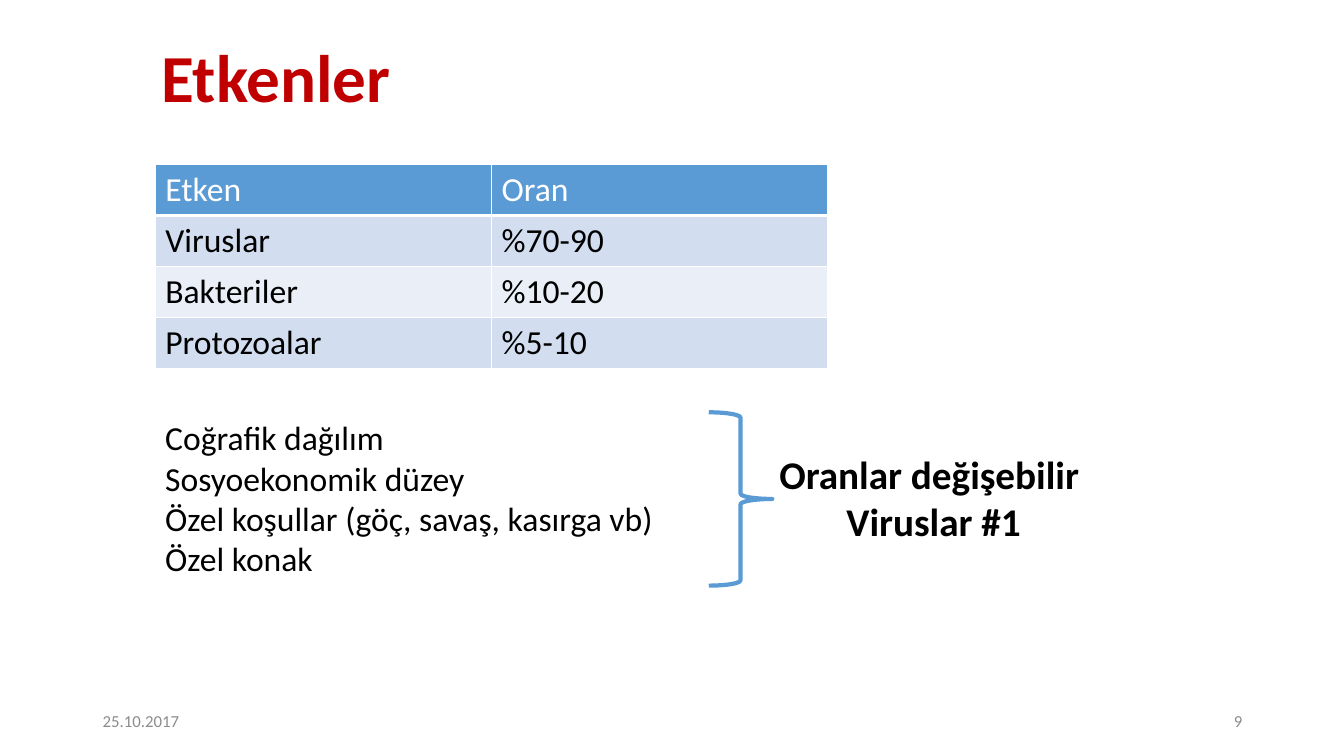
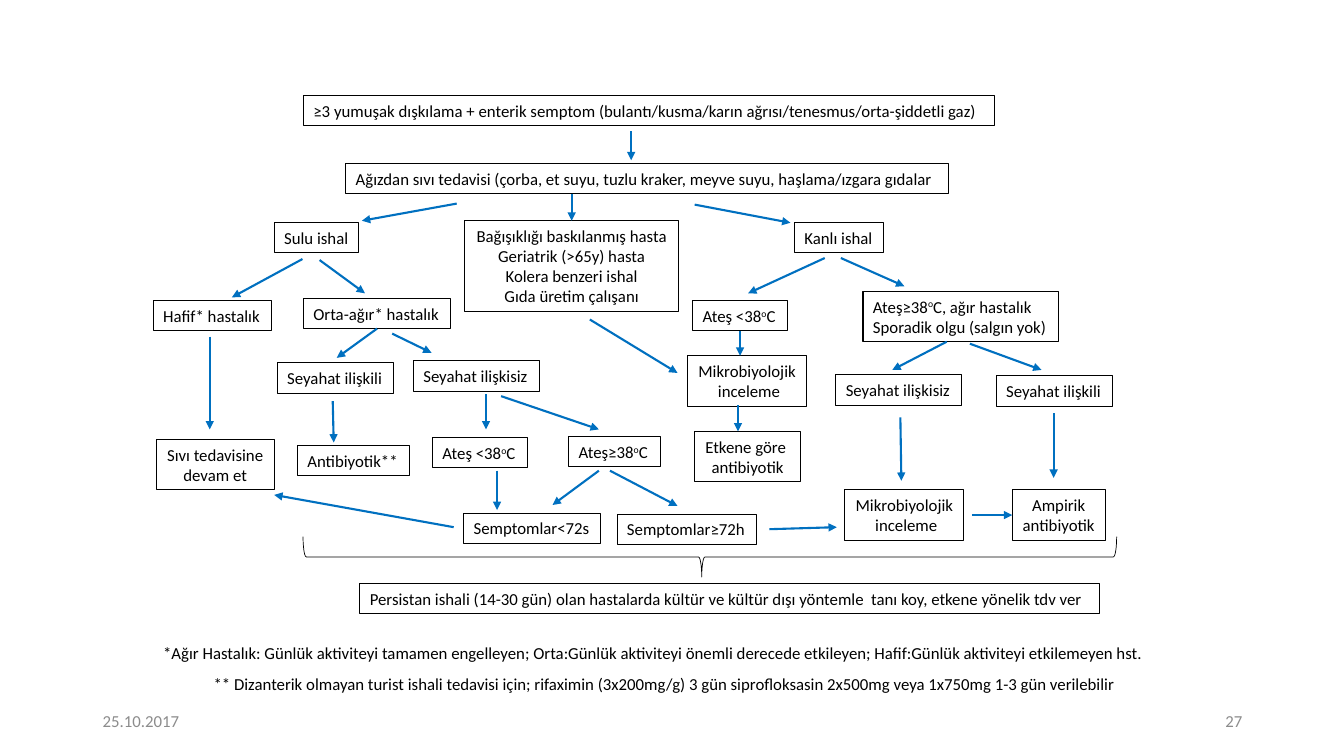
from lxml import etree
from pptx import Presentation
from pptx.dml.color import RGBColor
from pptx.enum.shapes import MSO_CONNECTOR, MSO_SHAPE
from pptx.enum.text import MSO_ANCHOR, MSO_AUTO_SIZE, PP_ALIGN
from pptx.oxml.ns import qn
from pptx.util import Emu, Pt

PX = 9144
FONT = "Calibri"
COLORS = {
    "title": "C00000", "text": "000000", "white": "FFFFFF", "footer": "8C8C8C",
    "accent": "5B9BD5", "band_dark": "D2DEEF", "band_light": "EAEFF7",
    "arrow": "0070C0",
}
LEFT, CENTER, RIGHT = PP_ALIGN.LEFT, PP_ALIGN.CENTER, PP_ALIGN.RIGHT
TOP, MIDDLE, BOTTOM = MSO_ANCHOR.TOP, MSO_ANCHOR.MIDDLE, MSO_ANCHOR.BOTTOM
FIT_SHAPE = MSO_AUTO_SIZE.SHAPE_TO_FIT_TEXT
RIGHT_BRACE = MSO_SHAPE.RIGHT_BRACE
STRAIGHT = MSO_CONNECTOR.STRAIGHT
SITE_TOP, SITE_LEFT, SITE_BOTTOM = 0, 1, 2

DATE = "25.10.2017"
RATES = [
    ("Etken", "Oran"),
    ("Viruslar", "%70-90"),
    ("Bakteriler", "%10-20"),
    ("Protozoalar", "%5-10"),
]
FACTORS = [
    "Coğrafik dağılım",
    "Sosyoekonomik düzey",
    "Özel koşullar (göç, savaş, kasırga vb)",
    "Özel konak",
]
NOTES = [
    "*Ağır Hastalık: Günlük aktiviteyi tamamen engelleyen; Orta:Günlük aktiviteyi "
    "önemli derecede etkileyen; Hafif:Günlük aktiviteyi etkilemeyen hst.",
    "** Dizanterik olmayan turist ishali tedavisi için; rifaximin (3x200mg/g) 3 gün "
    "siprofloksasin 2x500mg veya 1x750mg 1-3 gün verilebilir",
]
NODES = {
    "symptoms": (151, 5, 685, LEFT, [
        "≥3 yumuşak dışkılama + enterik semptom "
        "(bulantı/kusma/karın ağrısı/tenesmus/orta-şiddetli gaz)"]),
    "oral_fluids": (193, 72, 598, LEFT, [
        "Ağızdan sıvı tedavisi (çorba, et suyu, tuzlu kraker, meyve suyu, "
        "haşlama/ızgara gıdalar"]),
    "watery": (122, 131, 84, LEFT, ["Sulu ishal"]),
    "bloody": (638, 131, 88, LEFT, ["Kanlı ishal"]),
    "mild": (2, 208, 117, LEFT, ["Hafif* hastalık"]),
    "continue_fluids": (5, 346, 117, CENTER, ["Sıvı tedavisine", "devam et"]),
    "moderate": (151, 206, 146, LEFT, ["Orta-ağır* hastalık"]),
    "bloody_travel": (838, 283, 115, LEFT, ["Seyahat ilişkili"]),
    "watery_no_travel": (260, 268, 125, LEFT, ["Seyahat ilişkisiz"]),
    "antibiotic": (145, 352, 111, LEFT, ["Antibiyotik**"]),
    "watery_low_fever": (279, 344, 94, LEFT, ["Ateş <38^o^C"]),
    "watery_high_fever": (414, 343, 91, LEFT, ["Ateş≥38^o^C"]),
    "short_symptoms": (310, 419, 136, LEFT, ["Semptomlar<72s"]),
    "long_symptoms": (462, 420, 138, LEFT, ["Semptomlar≥72h"]),
    "bloody_low_fever": (537, 208, 94, LEFT, ["Ateş <38^o^C"]),
    "bloody_severe": (706, 199, 194, LEFT, [
        "Ateş≥38^o^C, ağır hastalık", "Sporadik olgu (salgın yok)"]),
    "watery_travel": (125, 270, 115, LEFT, ["Seyahat ilişkili"]),
    "bloody_no_travel": (679, 282, 125, LEFT, ["Seyahat ilişkisiz"]),
    "late_microbiology": (688, 396, 118, CENTER, ["Mikrobiyolojik", " inceleme"]),
    "empiric": (854, 396, 92, CENTER, ["Ampirik", "antibiyotik"]),
    "microbiology": (532, 263, 118, CENTER, ["Mikrobiyolojik", " inceleme"]),
    "targeted": (539, 338, 105, CENTER, ["Etkene göre ", "antibiyotik"]),
    "persistent": (207, 489, 734, LEFT, [
        "Persistan ishali (14-30 gün) olan hastalarda kültür ve kültür dışı "
        "yöntemle  tanı koy, etkene yönelik tdv ver"]),
    "risk_groups": (311, 129, 212, CENTER, [
        "Bağışıklığı baskılanmış hasta", "Geriatrik (>65y) hasta",
        "Kolera benzeri ishal", "Gıda üretim çalışanı"]),
}
ARROWS = [
    ((303, 112), (209, 129)),
    ((539, 113), (634, 131)),
    ((150, 167), (80, 205)),
    ((167, 168), (212, 201)),
    ((435, 227), (522, 280)),
    ((668, 166), (592, 201)),
    ((684, 166), (747, 194)),
    (("moderate", SITE_BOTTOM), (184, 265)),
    ((239, 241), (278, 260)),
    ((476, 40), (476, 69)),
    ((417, 102), ("risk_groups", SITE_TOP)),
    ((58, 244), (58, 336)),
    ((332, 301), (332, 336)),
    ((347, 303), (444, 336)),
    ((180, 308), (181, 349)),
    (("bloody_low_fever", SITE_BOTTOM), (584, 263)),
    ((343, 377), (343, 416)),
    ((582, 312), (582, 338)),
    ((300, 433), (122, 401)),
    ((444, 377), (398, 411)),
    ((455, 377), (522, 412)),
    ((613, 435), (680, 433)),
    ((743, 324), (744, 387)),
    ((814, 421), ("empiric", SITE_LEFT)),
    ((895, 320), (895, 384)),
    ((789, 249), (735, 277)),
    ((812, 251), (883, 277)),
]


def px(*values):
    return [Emu(value * PX) for value in values]


def rgb(name):
    return RGBColor.from_string(COLORS[name])


def set_line(shape, color, width):
    shape.line.color.rgb = rgb(color)
    shape.line.width = Pt(width)


def write_text(frame, lines, size=12, color="text", bold=False, align=LEFT,
               anchor=TOP, spacing=None):
    frame.vertical_anchor = anchor
    for index, line in enumerate(lines):
        paragraph = frame.paragraphs[0] if index == 0 else frame.add_paragraph()
        paragraph.alignment = align
        if spacing:
            paragraph.line_spacing = spacing
        for position, piece in enumerate(line.split("^")):
            run = paragraph.add_run()
            run.text = piece
            run.font.name = FONT
            run.font.size = Pt(size)
            run.font.bold = bold
            run.font.color.rgb = rgb(color)
            if position % 2:
                run.font._element.set("baseline", "30000")


def add_text(slide, box, lines, wrap=True, **text_format):
    shape = slide.shapes.add_textbox(*px(*box))
    frame = shape.text_frame
    frame.word_wrap = wrap
    frame.auto_size = MSO_AUTO_SIZE.NONE if wrap else FIT_SHAPE
    write_text(frame, lines, **text_format)
    return shape


def add_brace(slide, box, color, width, rotation=0, adjustments=()):
    brace = slide.shapes.add_shape(RIGHT_BRACE, *px(*box))
    brace.shadow.inherit = False
    brace.fill.background()
    brace.rotation = rotation
    set_line(brace, color, width)
    for index, value in enumerate(adjustments):
        brace.adjustments[index] = value


def add_title(slide, text):
    add_text(slide, (150, 57, 792, 63), [text], size=48, color="title", bold=True,
             anchor=BOTTOM)


def add_footer(slide, number):
    for left, text, align in ((942, str(number), RIGHT), (92, DATE, LEFT)):
        add_text(slide, (left, 695, 300, 40), [text], color="footer", align=align,
                 anchor=MIDDLE)


def set_cell_borders(cell, bottom_width):
    properties = cell._tc.get_or_add_tcPr()
    widths = (("lnL", 1), ("lnR", 1), ("lnT", 1), ("lnB", bottom_width))
    for index, (tag, width) in enumerate(widths):
        border = etree.Element(qn(f"a:{tag}"), w=str(Pt(width)))
        fill = etree.SubElement(border, qn("a:solidFill"))
        etree.SubElement(fill, qn("a:srgbClr"), val=COLORS["white"])
        properties.insert(index, border)


def add_rate_table(slide, box):
    table = slide.shapes.add_table(len(RATES), len(RATES[0]), *px(*box)).table
    table.horz_banding = False
    for row, values in enumerate(RATES):
        header = row == 0
        fill = "accent" if header else ("band_light", "band_dark")[row % 2]
        for column, value in enumerate(values):
            cell = table.cell(row, column)
            cell.fill.solid()
            cell.fill.fore_color.rgb = rgb(fill)
            set_cell_borders(cell, 3 if header else 1)
            write_text(cell.text_frame, [value], size=24,
                       color="white" if header else "text")


def add_factors(slide, box):
    left, top, width, height = box
    add_text(slide, (left, top, 508, height), FACTORS, wrap=False, size=24)
    add_brace(slide, (left + 549, top, 63, height), "accent", 3)
    add_text(slide, (left + 607, top + 33, width - 607, 104),
             ["Oranlar değişebilir ", "Viruslar #1"], wrap=False, size=28,
             bold=True, align=CENTER)


def add_arrow(slide, origin, nodes, start, end):
    def locate(target):
        if target[0] in nodes:
            return 0, 0
        return origin[0] + target[0], origin[1] + target[1]

    arrow = slide.shapes.add_connector(STRAIGHT, *px(*locate(start), *locate(end)))
    for target, connect in ((start, arrow.begin_connect), (end, arrow.end_connect)):
        if target[0] in nodes:
            connect(nodes[target[0]], target[1])
    set_line(arrow, "arrow", 1.5)
    etree.SubElement(arrow.line._get_or_add_ln(), qn("a:tailEnd"), type="triangle")
    etree.SubElement(arrow._element.spPr, qn("a:effectLst"))


def add_flowchart(slide, origin):
    left, top = origin
    nodes = {}
    for name, (x, y, width, align, lines) in NODES.items():
        box = (left + x, top + y, width, 10 + 20 * len(lines))
        nodes[name] = add_text(slide, box, lines, wrap=False, align=align)
        set_line(nodes[name], "text", 0.75)
    add_brace(slide, (left + 534, top + 59, 40, 807), "text", 0.5, rotation=90,
              adjustments=(0.08, 0.51))
    for start, end in ARROWS:
        add_arrow(slide, origin, nodes, start, end)


def add_notes(slide, box):
    shape = add_text(slide, box, NOTES, wrap=False, spacing=1.5)
    properties = shape.text_frame.paragraphs[1]._p.get_or_add_pPr()
    properties.set("lvl", "1")
    properties.set("marL", str(50 * PX))


def build_agents_slide(slide):
    add_title(slide, "Etkenler")
    add_rate_table(slide, (154, 163, 667, 200))
    add_factors(slide, (154, 409, 937, 172))
    add_footer(slide, 9)


def build_algorithm_slide(slide):
    add_notes(slide, (152, 623, 1003, 71))
    add_flowchart(slide, (150, 90))
    add_footer(slide, 27)


def main():
    presentation = Presentation()
    presentation.slide_width, presentation.slide_height = px(1333, 750)
    for build in (build_agents_slide, build_algorithm_slide):
        build(presentation.slides.add_slide(presentation.slide_layouts[6]))
    presentation.save("out.pptx")


if __name__ == "__main__":
    main()
